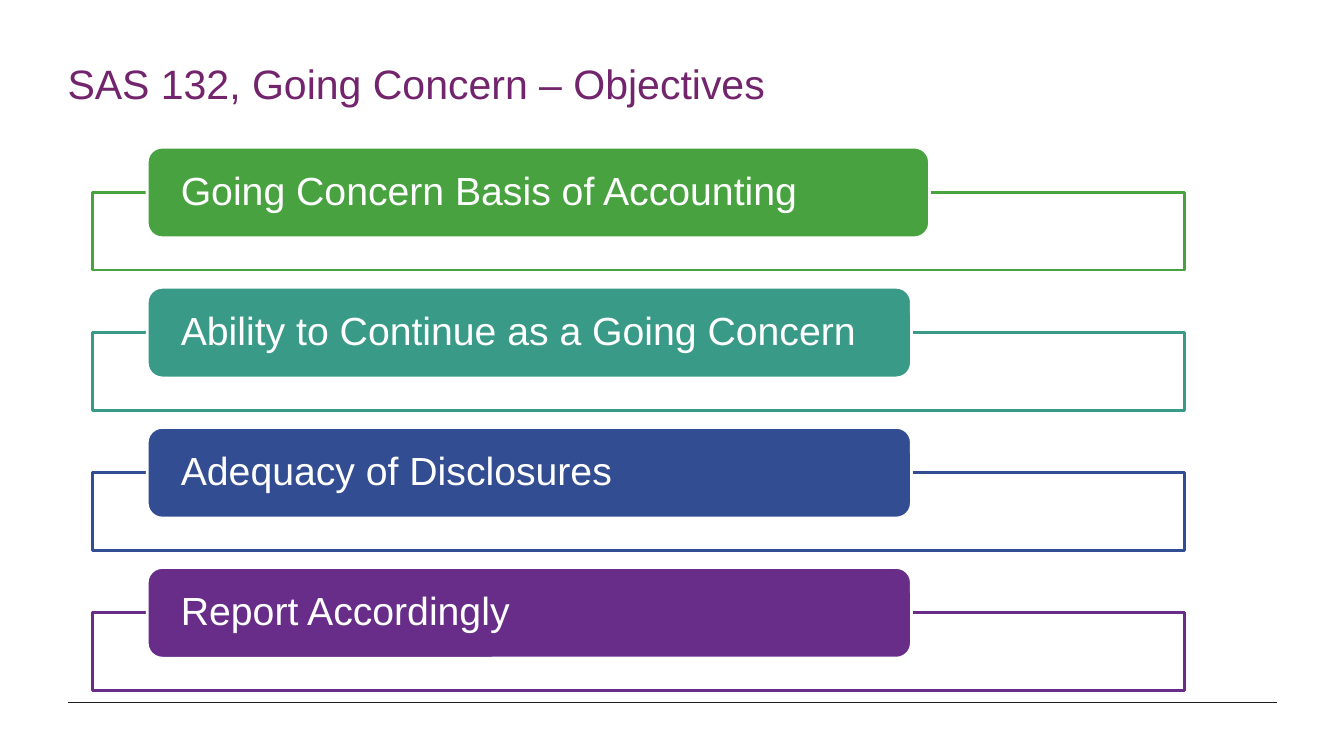
from lxml import etree
from pptx import Presentation
from pptx.dml.color import RGBColor
from pptx.enum.shapes import MSO_CONNECTOR, MSO_SHAPE
from pptx.enum.text import MSO_ANCHOR, PP_ALIGN
from pptx.oxml.ns import qn
from pptx.util import Inches, Pt

RECT = MSO_SHAPE.RECTANGLE
ROUNDED = MSO_SHAPE.ROUNDED_RECTANGLE
STRAIGHT = MSO_CONNECTOR.STRAIGHT
TOP = MSO_ANCHOR.TOP
MIDDLE = MSO_ANCHOR.MIDDLE
LEFT = PP_ALIGN.LEFT

WHITE = RGBColor(0xFF, 0xFF, 0xFF)
DARK = RGBColor(0x1D, 0x1D, 0x1D)
PLUM = RGBColor(0x72, 0x24, 0x6C)
GREEN = RGBColor(0x48, 0xA2, 0x3F)
TEAL = RGBColor(0x39, 0x9A, 0x88)
BLUE = RGBColor(0x33, 0x4D, 0x92)
PURPLE = RGBColor(0x67, 0x2D, 0x89)

FONT = "Arial"
FIRST_TOP = 1.46
PITCH = 1.39
OBJECTIVES = [
    ("Going Concern Basis of Accounting", GREEN, 7.76),
    ("Ability to Continue as a Going Concern", TEAL, 7.58),
    ("Adequacy of Disclosures", BLUE, 7.58),
    ("Report Accordingly", PURPLE, 7.58),
]


def set_text(sp, text, size, color, anchor, inset=0, spacing=1.0):
    tf = sp.text_frame
    tf.word_wrap = True
    tf.vertical_anchor = anchor
    tf.margin_left = tf.margin_right = Inches(inset)
    tf.margin_top = tf.margin_bottom = 0
    p = tf.paragraphs[0]
    p.alignment = LEFT
    p.line_spacing = spacing
    r = p.add_run()
    r.text = text
    r.font.name = FONT
    r.font.size = Pt(size)
    r.font.color.rgb = color


def add_box(s, kind, left, top, width, height, fill, line):
    sp = s.shapes.add_shape(kind, Inches(left), Inches(top), Inches(width), Inches(height))
    sp.shadow.inherit = False
    sp.fill.solid()
    sp.fill.fore_color.rgb = fill
    sp.line.color.rgb = line
    sp.line.width = Pt(2)
    return sp


def set_opacity(sp, percent):
    color = sp.fill._xPr.find(qn("a:solidFill"))[0]
    etree.SubElement(color, qn("a:alpha")).set("val", str(percent * 1000))


def add_title(s, text):
    sp = s.shapes.add_textbox(Inches(0.67), Inches(0.58), Inches(11.33), Inches(0.63))
    set_text(sp, text, 29.3, PLUM, TOP)


def add_footer_rule(s):
    rule = s.shapes.add_connector(STRAIGHT, Inches(0.67), Inches(6.97), Inches(12.67), Inches(6.97))
    rule.line.color.rgb = DARK
    rule.line.width = Pt(0.5)
    etree.SubElement(rule._element.spPr, qn("a:effectLst"))


def add_objective(s, top, text, color, width):
    frame = add_box(s, RECT, 0.92, top + 0.45, 10.83, 0.77, WHITE, color)
    set_opacity(frame, 90)
    label = add_box(s, ROUNDED, 1.46, top, width, 0.9, color, WHITE)
    set_text(label, text, 28, WHITE, MIDDLE, inset=0.29, spacing=0.9)


def main():
    prs = Presentation()
    prs.slide_width = Inches(13.33)
    prs.slide_height = Inches(7.5)
    s = prs.slides.add_slide(prs.slide_layouts[6])
    add_footer_rule(s)
    add_title(s, "SAS 132, Going Concern – Objectives")
    for i, (text, color, width) in enumerate(OBJECTIVES):
        add_objective(s, FIRST_TOP + i * PITCH, text, color, width)
    prs.save("out.pptx")


if __name__ == "__main__":
    main()
